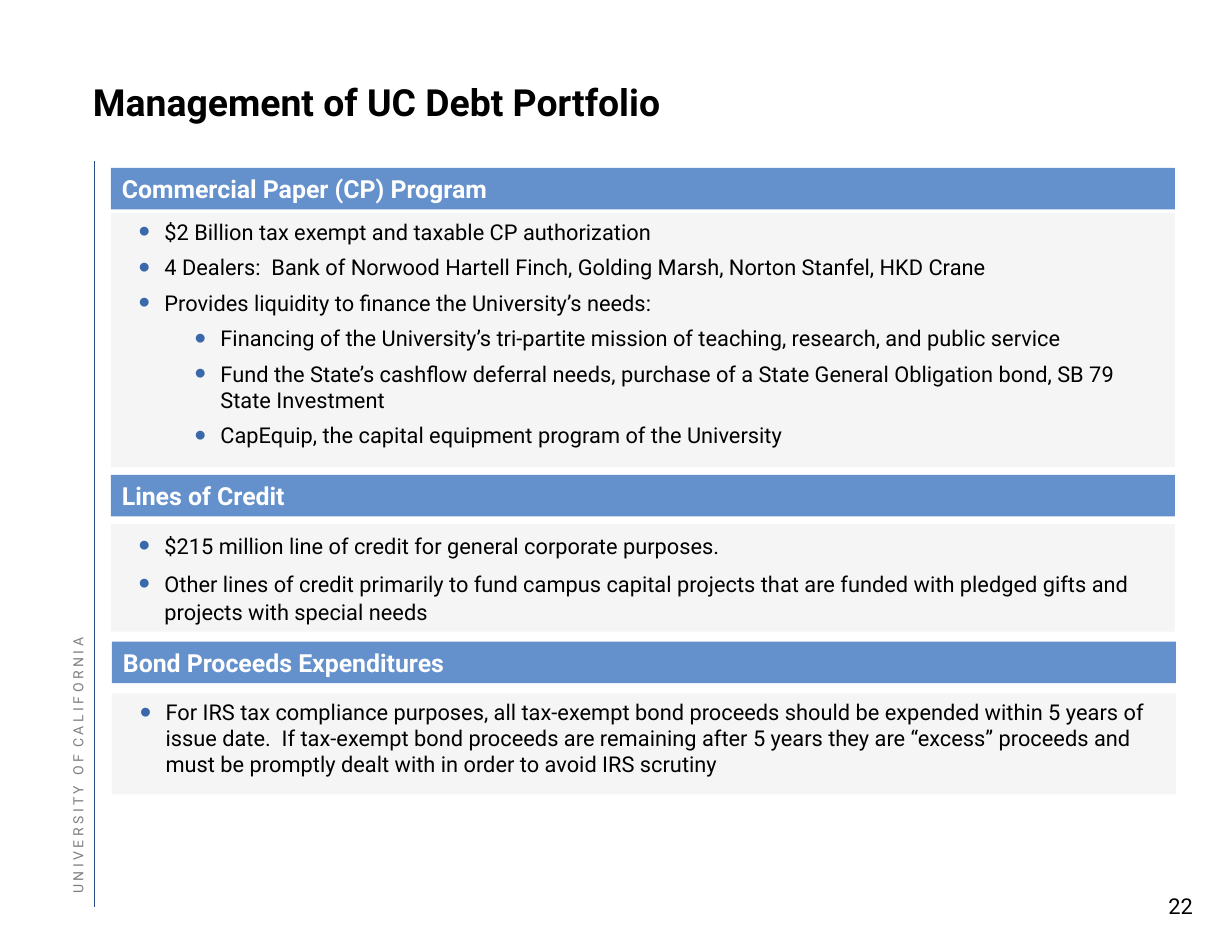
from dataclasses import dataclass

from lxml.etree import SubElement
from pptx import Presentation
from pptx.dml.color import RGBColor
from pptx.enum.shapes import MSO_CONNECTOR, MSO_SHAPE
from pptx.enum.text import MSO_ANCHOR, PP_ALIGN
from pptx.oxml.ns import qn
from pptx.util import Inches, Pt

COLUMNS, ROWS = 110, 85
CELL = Inches(0.1)
BULLET_INDENT = Inches(0.23)
LEVEL_MARGINS = {1: Inches(0.38), 2: Inches(0.88)}


@dataclass(frozen=True)
class Theme:
    font: str = "Roboto"
    ink: str = "000000"
    header_ink: str = "FFFFFF"
    side_ink: str = "808080"
    header_fill: str = "6490CB"
    panel_fill: str = "D9D9D9"
    panel_opacity: int = 25
    bullet: str = "3969AA"
    rule: str = "264E84"
    title_size: int = 24
    header_size: int = 16
    body_size: int = 14
    side_size: int = 9


@dataclass(frozen=True)
class Box:
    """A region in grid columns and rows."""
    column: float
    row: float
    columns: float
    rows: float

    def lengths(self):
        return [round(value * CELL) for value in
                (self.column, self.row, self.columns, self.rows)]


@dataclass(frozen=True)
class Section:
    heading: str
    points: list
    left: float
    top: float
    body_top: float
    body_rows: float
    line_spacing: float = 1.0


THEME = Theme()
SECTIONS = [
    Section("Commercial Paper (CP) Program", [
        (1, "$2 Billion tax exempt and taxable CP authorization"),
        (1, "4 Dealers:  Bank of Norwood Hartell Finch, Golding Marsh, "
            "Norton Stanfel, HKD Crane"),
        (1, "Provides liquidity to finance the University’s needs:"),
        (2, "Financing of the University’s tri-partite mission of teaching, "
            "research, and public service"),
        (2, "Fund the State’s cashflow deferral needs, purchase of a State "
            "General Obligation bond, SB 79 State Investment"),
        (2, "CapEquip, the capital equipment program of the University"),
    ], left=9.9, top=15, body_top=19, body_rows=22.7),
    Section("Lines of Credit", [
        (1, "$215 million line of credit for general corporate purposes."),
        (1, "Other lines of credit primarily to fund campus capital projects "
            "that are funded with pledged gifts and projects with special needs"),
    ], left=9.9, top=42.4, body_top=46.8, body_rows=9.6, line_spacing=1.1),
    Section("Bond Proceeds Expenditures", [
        (1, "For IRS tax compliance purposes, all tax-exempt bond proceeds "
            "should be expended within 5 years of issue date.  If tax-exempt "
            "bond proceeds are remaining after 5 years they are “excess” "
            "proceeds and must be promptly dealt with in order to avoid IRS "
            "scrutiny"),
    ], left=10, top=57.3, body_top=61.9, body_rows=9),
]


def format_runs(paragraph, size, color, bold=False):
    for run in paragraph.runs:
        run.font.name = THEME.font
        run.font.size = Pt(size)
        run.font.bold = bold
        run.font.color.rgb = RGBColor.from_string(color)


def add_label(slide, box, text, size, color, bold=False, inset=True):
    label = slide.shapes.add_textbox(*box.lengths())
    frame = label.text_frame
    frame.word_wrap = True
    if not inset:
        frame.margin_left = frame.margin_right = 0
        frame.margin_top = frame.margin_bottom = 0
    frame.text = text
    format_runs(frame.paragraphs[0], size, color, bold)
    return label


def add_panel(slide, box, fill):
    panel = slide.shapes.add_shape(MSO_SHAPE.RECTANGLE, *box.lengths())
    panel.shadow.inherit = False
    panel.line.fill.background()
    panel.fill.solid()
    panel.fill.fore_color.rgb = RGBColor.from_string(fill)
    panel.text_frame.word_wrap = True
    panel.text_frame.vertical_anchor = MSO_ANCHOR.TOP
    return panel


def set_opacity(shape, percent):
    color = shape.fill._xPr.find(qn("a:solidFill"))[0]
    SubElement(color, qn("a:alpha"), val=str(percent * 1000))


def add_bullet(paragraph, level):
    paragraph.level = level
    properties = paragraph._p.get_or_add_pPr()
    properties.set("marL", str(LEVEL_MARGINS[level]))
    properties.set("indent", str(-BULLET_INDENT))
    color = SubElement(properties, qn("a:buClr"))
    SubElement(color, qn("a:srgbClr"), val=THEME.bullet)
    SubElement(properties, qn("a:buSzPct"), val="150000")
    SubElement(properties, qn("a:buFont"), typeface="Arial")
    SubElement(properties, qn("a:buChar"), char="•")


def add_section(slide, section, columns):
    header = add_panel(slide, Box(section.left, section.top, columns, 3.7),
                       THEME.header_fill)
    header.text_frame.text = section.heading
    heading = header.text_frame.paragraphs[0]
    heading.alignment = PP_ALIGN.LEFT
    format_runs(heading, THEME.header_size, THEME.header_ink, bold=True)

    body = add_panel(slide, Box(section.left, section.body_top, columns,
                                section.body_rows), THEME.panel_fill)
    set_opacity(body, THEME.panel_opacity)
    frame = body.text_frame
    frame.text = "\n".join(text for _, text in section.points)
    for index, (level, _) in enumerate(section.points):
        point = frame.paragraphs[index]
        add_bullet(point, level)
        point.alignment = PP_ALIGN.LEFT
        point.line_spacing = section.line_spacing
        point.space_before = Pt(6 if index else 0)
        format_runs(point, THEME.body_size, THEME.ink)


def add_title(slide, box):
    title = add_label(slide, box, "Management of UC Debt Portfolio",
                      THEME.title_size, THEME.ink, bold=True, inset=False)
    title.text_frame.vertical_anchor = MSO_ANCHOR.MIDDLE
    title.text_frame.paragraphs[0].line_spacing = Pt(27.9)


def add_side_band(slide, box, rule_column, rule_top, rule_bottom):
    """Place the rotated university name and the rule beside it."""
    x, top, bottom = (round(v * CELL) for v in (rule_column, rule_top, rule_bottom))
    rule = slide.shapes.add_connector(MSO_CONNECTOR.STRAIGHT, x, top, x, bottom)
    rule.line.color.rgb = RGBColor.from_string(THEME.rule)
    rule.line.width = Pt(0.35)
    SubElement(rule._element.spPr, qn("a:effectLst"))

    university = add_label(slide, box,
                           "U N I V E R S I T Y   O F  C A L I F O R N I A",
                           THEME.side_size, THEME.side_ink, inset=False)
    university.rotation = 270
    university.text_frame.word_wrap = False
    university.text_frame.vertical_anchor = MSO_ANCHOR.BOTTOM
    university.text_frame.paragraphs[0].line_spacing = Pt(12)


def add_page_number(slide, box):
    number = add_label(slide, box, "22", THEME.body_size, THEME.ink)
    number.text_frame.paragraphs[0].alignment = PP_ALIGN.RIGHT


def main():
    deck = Presentation()
    deck.slide_width, deck.slide_height = COLUMNS * CELL, ROWS * CELL
    slide = deck.slides.add_slide(deck.slide_layouts[6])
    add_side_band(slide, Box(-14.7, 57.4, 43.3, 1.5), 8.4, 14.4, 81)
    add_page_number(slide, Box(102.5, 79.2, 5, 3.4))
    add_title(slide, Box(8.3, 5.8, 80, 6.7))
    for section in SECTIONS:
        add_section(slide, section, columns=95)
    deck.save("out.pptx")


if __name__ == "__main__":
    main()
